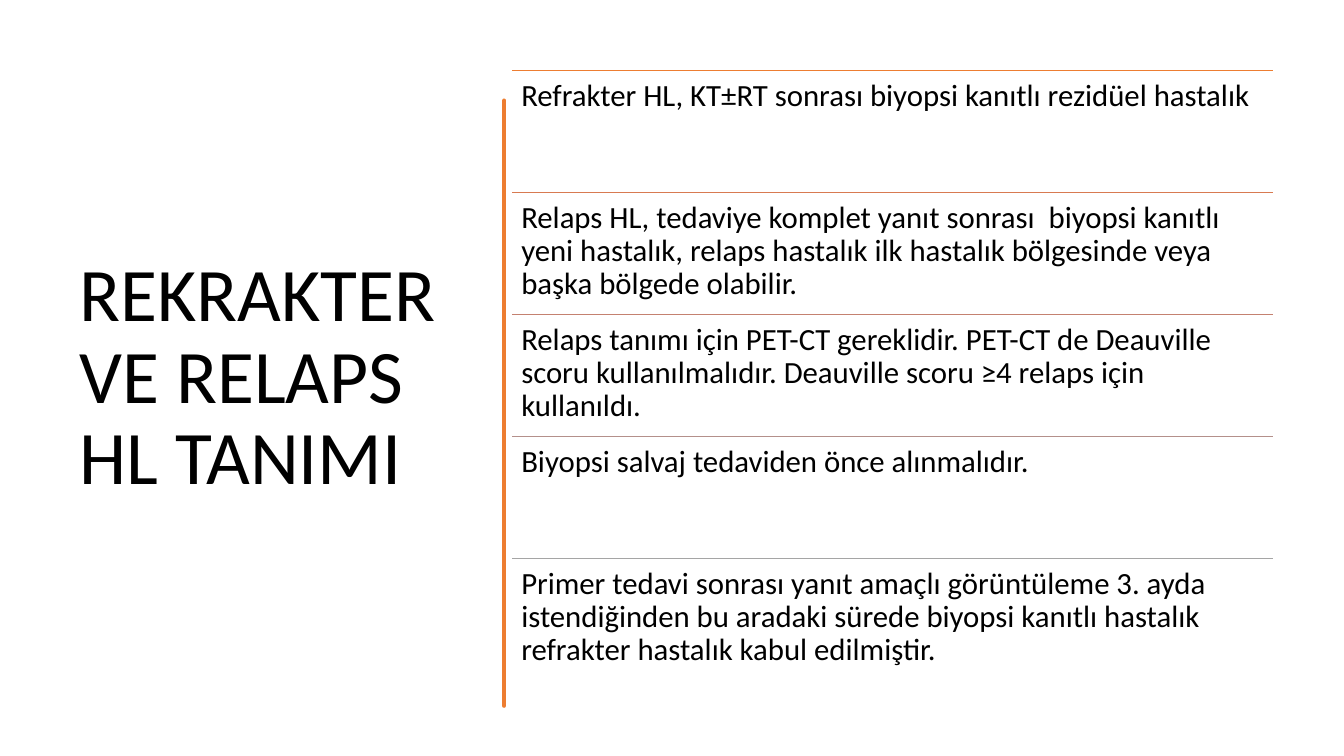
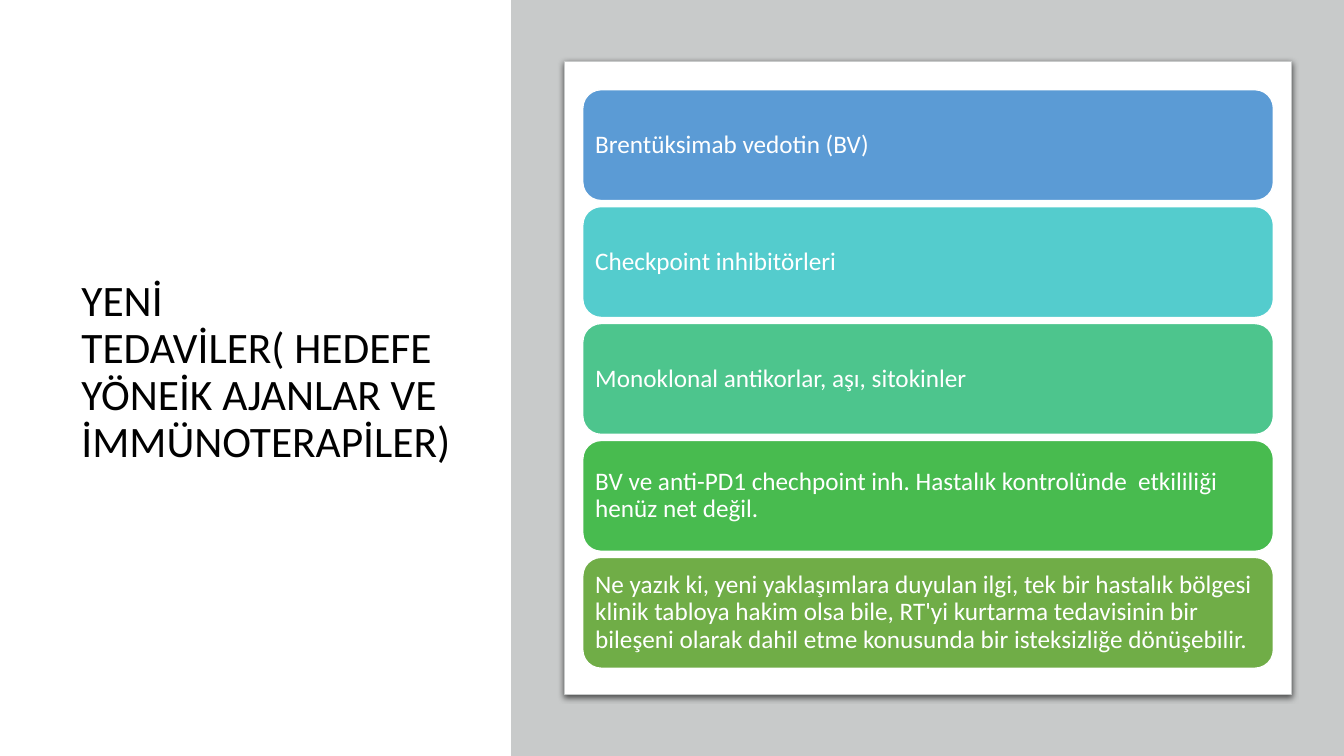
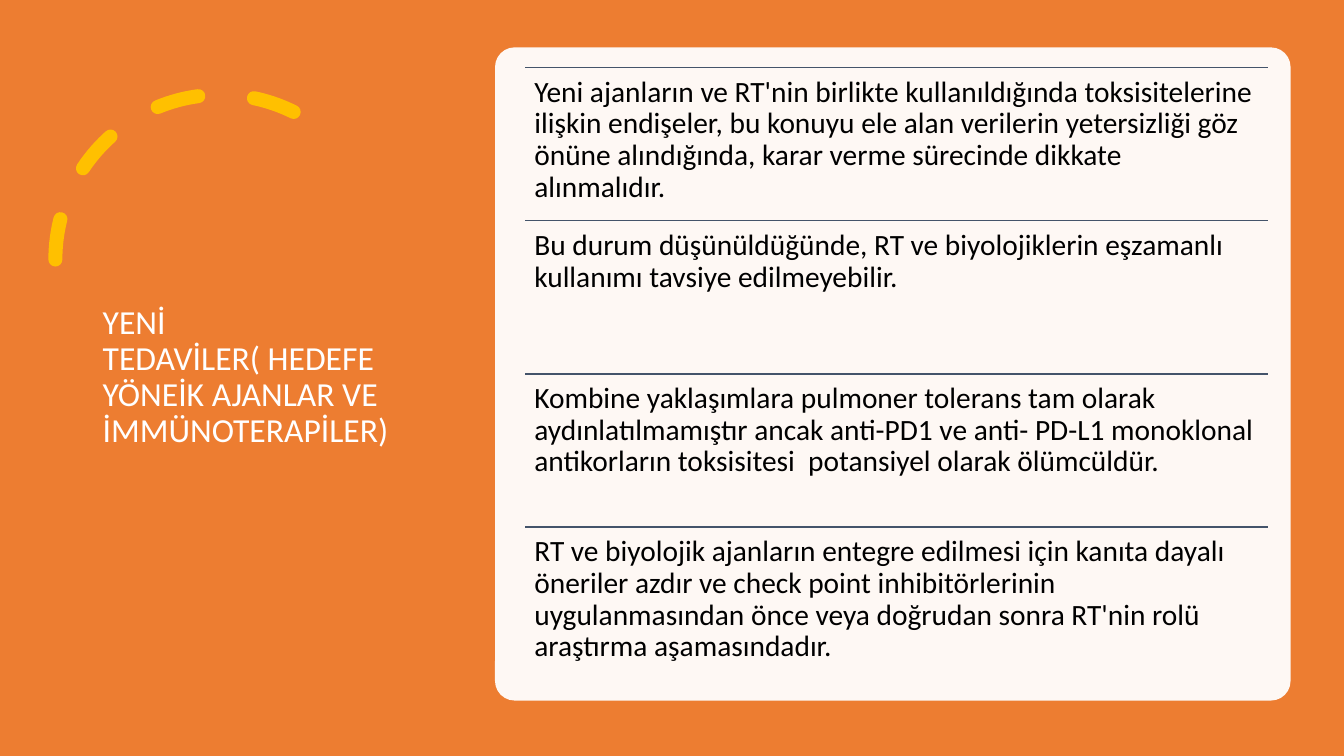
from dataclasses import dataclass

from lxml import etree
from pptx import Presentation
from pptx.dml.color import RGBColor
from pptx.enum.dml import MSO_LINE
from pptx.enum.shapes import MSO_CONNECTOR, MSO_SHAPE
from pptx.enum.text import MSO_ANCHOR, PP_ALIGN
from pptx.oxml.ns import qn
from pptx.util import Inches, Pt

STRAIGHT = MSO_CONNECTOR.STRAIGHT
RECTANGLE, ROUNDED, ARC = MSO_SHAPE.RECTANGLE, MSO_SHAPE.ROUNDED_RECTANGLE, MSO_SHAPE.ARC
TOP, MIDDLE = MSO_ANCHOR.TOP, MSO_ANCHOR.MIDDLE
LEFT = PP_ALIGN.LEFT
DASH = MSO_LINE.DASH
NO_BREAK = chr(160)


@dataclass(frozen=True)
class Theme:
    font: str = "Calibri"
    line_spacing: float = 0.9
    black: str = "000000"
    white: str = "FFFFFF"
    orange: str = "ED7D31"
    gold: str = "FFC000"
    slate: str = "44546A"
    panel: str = "C8CACA"
    rule_fade: tuple = ("ED7D31", "D87A51", "C48170", "B4908B", "A5A5A5")
    card_colors: tuple = ("5B9BD5", "54CCCD", "4DC58D", "48BB4F", "70AD47")
    title_large: int = 54
    title_medium: int = 31
    title_small: int = 24
    body_large: int = 22
    body_medium: int = 21
    body_small: int = 18


THEME = Theme()


def write_text(shape, text, size, color, anchor=TOP, inset=(0.1, 0.05)):
    """Put one formatted paragraph into a shape; inset is (side, top and bottom)."""
    frame = shape.text_frame
    frame.word_wrap = True
    frame.vertical_anchor = anchor
    frame.margin_left = frame.margin_right = Inches(inset[0])
    frame.margin_top = frame.margin_bottom = Inches(inset[1])
    para = frame.paragraphs[0]
    para.alignment = LEFT
    para.line_spacing = THEME.line_spacing
    span = para.add_run()
    span.text = text
    span.font.name = THEME.font
    span.font.size = Pt(size)
    span.font.color.rgb = RGBColor.from_string(color)


class SlideBuilder:
    def __init__(self, deck):
        self.deck = deck
        self.page = None

    def new_page(self):
        self.page = self.deck.slides.add_slide(self.deck.slide_layouts[6])

    def paint(self, shape, fill=None, line=None, width=1):
        shape.shadow.inherit = False
        if fill:
            shape.fill.solid()
            shape.fill.fore_color.rgb = RGBColor.from_string(fill)
        else:
            shape.fill.background()
        if line:
            shape.line.color.rgb = RGBColor.from_string(line)
            shape.line.width = Pt(width)
        else:
            shape.line.fill.background()

    def shape(self, kind, area, adjustments=(), **paint):
        shape = self.page.shapes.add_shape(kind, *map(Inches, area))
        for index, value in enumerate(adjustments):
            shape.adjustments[index] = value
        self.paint(shape, **paint)
        return shape

    def text(self, text, area, **style):
        box = self.page.shapes.add_textbox(*map(Inches, area))
        write_text(box, text, **style)

    def title(self, text, area, size, color=THEME.black):
        self.text(text, area, size=size, color=color, anchor=MIDDLE)

    def rule(self, left, top, width, color):
        line = self.page.shapes.add_connector(
            STRAIGHT, Inches(left), Inches(top), Inches(left + width), Inches(top))
        line.line.color.rgb = RGBColor.from_string(color)
        line.line.width = Pt(1)
        etree.SubElement(line._element.spPr, qn("a:effectLst"))

    def ruled_list(self, items, colors, area, pitch, size):
        left, top, width = area
        for index, (item, color) in enumerate(zip(items, colors)):
            row_top = top + index * pitch
            self.rule(left, row_top, width, color)
            self.text(item, (left, row_top, width, pitch), size=size,
                      color=THEME.black, inset=(0.09, 0.09))

    def card_stack(self, items, colors, area, pitch, size):
        left, top, width, height = area
        for index, (item, color) in enumerate(zip(items, colors)):
            card = self.shape(ROUNDED, (left, top + index * pitch, width, height),
                              fill=color, line=THEME.white)
            write_text(card, item, size, THEME.white, anchor=MIDDLE, inset=(0.07, 0.07))

    def brush_stroke(self, center, sway, thickness, color, width):
        """Draw a hand-made vertical bar; sway holds (y, sideways offset) pairs."""
        right = [(center + thickness / 2 + shift, y) for y, shift in sway]
        left = [(center - thickness / 2 + shift, y) for y, shift in reversed(sway)]
        start, *rest = right + left
        builder = self.page.shapes.build_freeform(*start, scale=Inches(1))
        builder.add_line_segments(rest, close=True)
        stroke = builder.convert_to_shape()
        self.paint(stroke, fill=color, line=color, width=width)
        etree.SubElement(stroke.line._get_or_add_ln(), qn("a:round"))

    def dashed_arc(self, area, angles, color, width):
        arc = self.shape(ARC, area, angles, line=color, width=width)
        arc.line.dash_style = DASH
        arc.line._get_or_add_ln().set("cap", "rnd")
        arc._element.spPr.xfrm.set("flipH", "1")


def set_alpha(color_element, percent):
    etree.SubElement(color_element, qn("a:alpha"), val=str(percent * 1000))


def drop_shadow(shape, color, alpha, blur, distance, angle):
    effects = shape._element.spPr.find(qn("a:effectLst"))
    shadow = etree.SubElement(
        effects, qn("a:outerShdw"), blurRad=str(Pt(blur)), dist=str(Pt(distance)),
        dir=str(angle * 60000), algn="t", rotWithShape="0")
    set_alpha(etree.SubElement(shadow, qn("a:srgbClr"), val=color), alpha)


# Wording
DEFINITIONS = (
    "Refrakter HL, KT±RT sonrası biyopsi kanıtlı rezidüel hastalık",
    "Relaps HL, tedaviye komplet yanıt sonrası  biyopsi kanıtlı yeni hastalık, "
    "relaps hastalık ilk hastalık bölgesinde veya başka bölgede olabilir.",
    "Relaps tanımı için PET-CT gereklidir. PET-CT de Deauville scoru "
    "kullanılmalıdır. Deauville scoru ≥4 relaps için kullanıldı.",
    "Biyopsi salvaj tedaviden önce alınmalıdır.",
    "Primer tedavi sonrası yanıt amaçlı görüntüleme 3. ayda istendiğinden bu "
    "aradaki sürede biyopsi kanıtlı hastalık refrakter hastalık kabul edilmiştir.",
)
NEW_TREATMENTS = f"YENİ TEDAVİLER({NO_BREAK}HEDEFE YÖNEİK AJANLAR VE İMMÜNOTERAPİLER)"
AGENTS = (
    "Brentüksimab vedotin (BV)",
    "Checkpoint inhibitörleri",
    "Monoklonal antikorlar, aşı, sitokinler",
    "BV ve anti-PD1 chechpoint inh. Hastalık kontrolünde  etkililiği henüz net değil.",
    "Ne yazık ki, yeni yaklaşımlara duyulan ilgi, tek bir hastalık bölgesi klinik "
    "tabloya hakim olsa bile, RT'yi kurtarma tedavisinin bir bileşeni olarak dahil "
    "etme konusunda bir isteksizliğe dönüşebilir.",
)
CAUTIONS = (
    "Yeni ajanların ve RT'nin birlikte kullanıldığında toksisitelerine ilişkin "
    "endişeler, bu konuyu ele alan verilerin yetersizliği göz önüne alındığında, "
    "karar verme sürecinde dikkate alınmalıdır.",
    "Bu durum düşünüldüğünde, RT ve biyolojiklerin eşzamanlı kullanımı tavsiye "
    "edilmeyebilir.",
    "Kombine yaklaşımlara pulmoner tolerans tam olarak aydınlatılmamıştır ancak "
    "anti-PD1 ve anti- PD-L1 monoklonal antikorların toksisitesi  potansiyel olarak "
    "ölümcüldür.",
    "RT ve biyolojik ajanların entegre edilmesi için kanıta dayalı öneriler azdır ve "
    "check point inhibitörlerinin uygulanmasından önce veya doğrudan sonra RT'nin "
    "rolü araştırma aşamasındadır.",
)
STROKE_SWAY = (
    (0.84, 0), (1.2, 0.01), (1.7, -0.01), (2.0, 0.01), (2.5, 0), (3.0, -0.01),
    (3.5, 0), (4.2, 0.01), (4.6, -0.01), (5.0, 0), (5.4, 0.01), (5.8, -0.01),
    (6.2, 0), (6.76, 0),
)


def definition_slide(builder):
    builder.new_page()
    builder.title("REKRAKTER VE RELAPS HL TANIMI", (0.69, 0.7, 3.74, 6.11),
                  THEME.title_large)
    builder.brush_stroke(4.74, STROKE_SWAY, 0.02, THEME.orange, 3.25)
    builder.ruled_list(DEFINITIONS, THEME.rule_fade, (5.08, 0.7, 7.55), 1.21,
                       THEME.body_large)


def agents_slide(builder):
    builder.new_page()
    builder.title(NEW_TREATMENTS, (0.71, 0.69, 4.01, 6.02), THEME.title_medium)
    # Grey panel with a raised white sheet
    builder.shape(RECTANGLE, (5.07, 0, 8.26, 7.5), fill=THEME.panel)
    sheet = builder.shape(ROUNDED, (5.6, 0.61, 7.21, 6.28), (0,), fill=THEME.white,
                          line=THEME.panel, width=0.75)
    drop_shadow(sheet, THEME.black, alpha=63, blur=4.5, distance=1.5, angle=90)
    builder.card_stack(AGENTS, THEME.card_colors, (5.78, 0.89, 6.85, 1.1), 1.16,
                       THEME.body_small)


def cautions_slide(builder):
    builder.new_page()
    builder.shape(RECTANGLE, (0, 0, 13.33, 7.5), fill=THEME.orange)
    builder.dashed_arc((0.55, 0.94, 3.27, 3.27), (146.13, 0), THEME.gold, 10)
    builder.title(NEW_TREATMENTS, (0.92, 0.7, 3.23, 6.09), THEME.title_small, THEME.white)
    # Slightly see-through sheet
    sheet = builder.shape(ROUNDED, (4.91, 0.47, 7.89, 6.48), (0.03,), fill=THEME.white)
    set_alpha(sheet._element.spPr.find(qn("a:solidFill"))[0], 95)
    builder.ruled_list(CAUTIONS, [THEME.slate] * len(CAUTIONS), (5.21, 0.67, 7.37), 1.52,
                       THEME.body_medium)


def main():
    deck = Presentation()
    deck.slide_width, deck.slide_height = Inches(13.33), Inches(7.5)
    builder = SlideBuilder(deck)
    definition_slide(builder)
    agents_slide(builder)
    cautions_slide(builder)
    deck.save("out.pptx")


if __name__ == "__main__":
    main()
